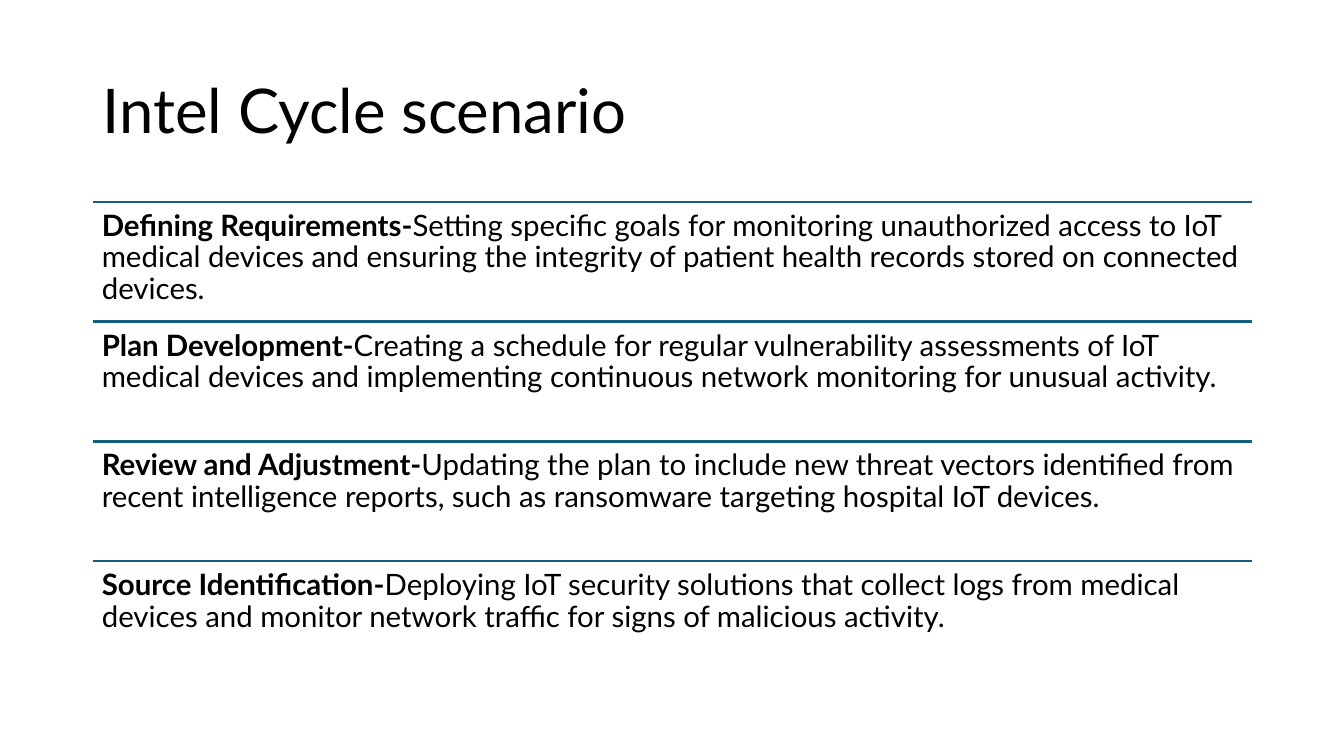
"""Build the Intel Cycle scenario slide."""
from pptx import Presentation
from pptx import util as u
from pptx.dml.color import RGBColor
from pptx.enum import shapes, text
from pptx.oxml.ns import qn
from lxml import etree

TITLE = "Intel Cycle scenario"
STEPS = [
    ("Defining Requirements-",
     "Setting specific goals for monitoring unauthorized access to IoT medical devices "
     "and ensuring the integrity of patient health records stored on connected devices."),
    ("Plan Development-",
     "Creating a schedule for regular vulnerability assessments of IoT medical devices "
     "and implementing continuous network monitoring for unusual activity."),
    ("Review and Adjustment-",
     "Updating the plan to include new threat vectors identified from recent "
     "intelligence reports, such as ransomware targeting hospital IoT devices."),
    ("Source Identification-",
     "Deploying IoT security solutions that collect logs from medical devices "
     "and monitor network traffic for signs of malicious activity."),
]

FONT = "Lato"
BLACK = RGBColor(0x00, 0x00, 0x00)
TEAL = RGBColor(0x15, 0x60, 0x82)
LEFT, WIDTH = 0.92, 11.5
TITLE_TOP, TITLE_HEIGHT = 0.4, 1.45
STEPS_TOP, STEP_HEIGHT = 2, 1.19


def add_text(s, top, height, runs, size, anchor, inset):
    sp = s.shapes.add_textbox(u.Inches(LEFT), u.Inches(top), u.Inches(WIDTH), u.Inches(height))
    tf = sp.text_frame
    tf.word_wrap = True
    tf.vertical_anchor = anchor
    tf.margin_left = tf.margin_right = u.Inches(inset)
    tf.margin_top = tf.margin_bottom = u.Inches(inset)
    p = tf.paragraphs[0]
    p.line_spacing = 0.9
    for words, bold in runs:
        r = p.add_run()
        r.text = words
        r.font.name = FONT
        r.font.size = u.Pt(size)
        r.font.bold = bold
        r.font.color.rgb = BLACK


def add_rule(s, top):
    line = s.shapes.add_connector(
        shapes.MSO_CONNECTOR.STRAIGHT,
        u.Inches(LEFT), u.Inches(top), u.Inches(LEFT + WIDTH), u.Inches(top))
    line.line.color.rgb = TEAL
    line.line.width = u.Pt(1.5)
    etree.SubElement(line._element.spPr, qn("a:effectLst"))


def main():
    prs = Presentation()
    prs.slide_width, prs.slide_height = u.Inches(13.33), u.Inches(7.5)
    s = prs.slides.add_slide(prs.slide_layouts[6])
    add_text(s, TITLE_TOP, TITLE_HEIGHT, [(TITLE, False)], 44, text.MSO_ANCHOR.MIDDLE, 0.1)
    for i, (name, detail) in enumerate(STEPS):
        top = STEPS_TOP + i * STEP_HEIGHT
        add_rule(s, top)
        add_text(s, top, STEP_HEIGHT, [(name, True), (detail, False)], 21,
                 text.MSO_ANCHOR.TOP, 0.09)
    prs.save("out.pptx")


if __name__ == "__main__":
    main()
